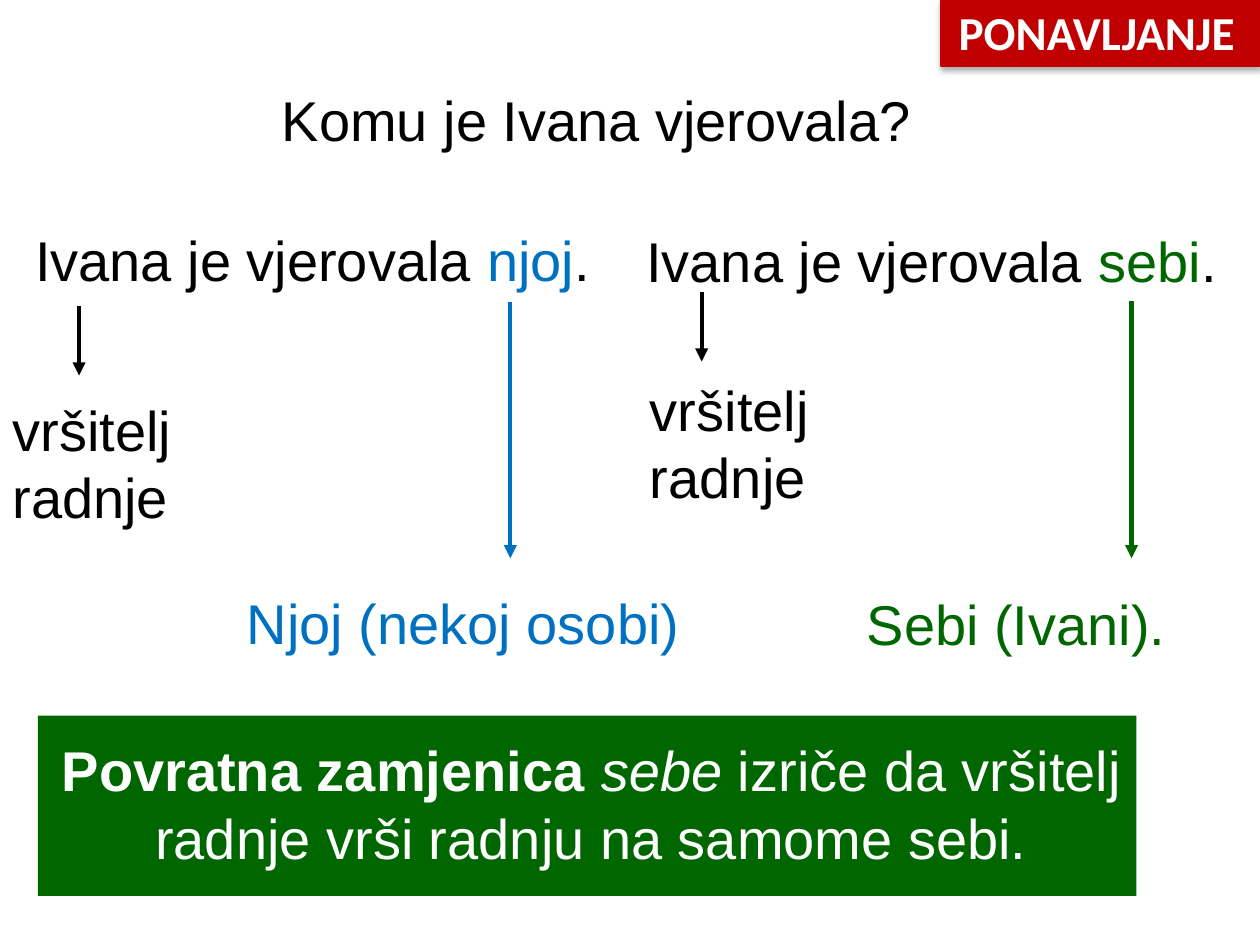
from dataclasses import dataclass

from lxml import etree
from pptx import Presentation
from pptx import util as u
from pptx.dml import color
from pptx.enum import shapes, text
from pptx.oxml import ns

Pt = u.Pt


@dataclass(frozen=True)
class Theme:
    black: str = "000000"
    white: str = "FFFFFF"
    blue: str = "0070C0"
    green: str = "006600"
    red: str = "C00000"
    body_font: str = "Arial"
    title_font: str = "Calibri"
    body_size: float = 32
    title_size: float = 27


theme = Theme()


def rgb(value):
    return color.RGBColor.from_string(value)


def add_span(para, words, tint, bold=False, italic=False, font=theme.body_font, size=theme.body_size):
    span = para.add_run()
    span.text = words
    span.font.name = font
    span.font.size = Pt(size)
    span.font.bold = bold
    span.font.italic = italic
    span.font.color.rgb = rgb(tint)


deck = Presentation()
deck.slide_width = Pt(720)
deck.slide_height = Pt(540)
page = deck.slides.add_slide(deck.slide_layouts[5])

labels = [
    (154, 45.4, 376.6, 46, False, [("Komu je Ivana vjerovala?", theme.black)]),
    (13, 125.3, 334, 46, False,
     [("Ivana je vjerovala ", theme.black), ("njoj", theme.blue), (".", theme.black)]),
    (362.2, 126, 351.4, 46, False,
     [("Ivana je vjerovala ", theme.black), ("sebi", theme.green), (".", theme.black)]),
    (0, 222.5, 118, 85, True, [("vršitelj radnje", theme.black)]),
    (364.3, 211, 118, 85, True, [("vršitelj radnje", theme.black)]),
    (134, 332.6, 280.8, 46, True, [("Njoj (nekoj osobi)", theme.blue)]),
    (488.2, 333.4, 212.4, 46, True, [("Sebi (Ivani).", theme.green)]),
]
for left, top, width, height, wrap, spans in labels:
    box = page.shapes.add_textbox(Pt(left), Pt(top), Pt(width), Pt(height))
    box.text_frame.word_wrap = wrap
    box.text_frame.auto_size = text.MSO_AUTO_SIZE.SHAPE_TO_FIT_TEXT
    for words, tint in spans:
        add_span(box.text_frame.paragraphs[0], words, tint)

arrows = [
    (45.2, 175, 214.6, theme.black),
    (291.6, 172.8, 319, theme.blue),
    (401, 167, 206.6, theme.black),
    (646.6, 172, 319, theme.green),
]
for x, start, end, tint in arrows:
    arrow = page.shapes.add_connector(shapes.MSO_CONNECTOR.STRAIGHT, Pt(x), Pt(start), Pt(x), Pt(end))
    arrow.line.color.rgb = rgb(tint)
    arrow.line.width = Pt(2.5)
    etree.SubElement(arrow.line._get_or_add_ln(), ns.qn("a:tailEnd"), type="triangle")
    etree.SubElement(arrow._element.spPr, ns.qn("a:effectLst"))

panels = [
    (537.8, 0, 182.2, 37.6, theme.red),
    (21.6, 409, 627.8, 103, theme.green),
]
for left, top, width, height, tint in panels:
    panel = page.shapes.add_shape(shapes.MSO_SHAPE.RECTANGLE, Pt(left), Pt(top), Pt(width), Pt(height))
    panel.shadow.inherit = False
    panel.fill.solid()
    panel.fill.fore_color.rgb = rgb(tint)
    if tint == theme.red:
        panel.line.color.rgb = rgb(tint)
        panel.line.width = Pt(1)
        effects = panel._element.spPr.find(ns.qn("a:effectLst"))
        shadow = etree.SubElement(effects, ns.qn("a:outerShdw"), blurRad=str(Pt(3.5)),
                                  dist=str(Pt(2.2)), dir="5400000", rotWithShape="0")
        shade = etree.SubElement(shadow, ns.qn("a:srgbClr"), val=theme.black)
        etree.SubElement(shade, ns.qn("a:alpha"), val="32000")
    else:
        panel.line.fill.background()

title = page.shapes.title
title.left, title.top, title.width, title.height = Pt(537.8), Pt(-12.2), Pt(172.8), Pt(49.7)
title._element.getparent().append(title._element)
rule = page.shapes.add_textbox(Pt(26.6), Pt(417.6), Pt(622.8), Pt(77.8))
for box in (title, rule):
    frame = box.text_frame
    frame.word_wrap = True
    frame.auto_size = text.MSO_AUTO_SIZE.NONE
    frame.margin_left = frame.margin_right = Pt(5)
    frame.margin_top = frame.margin_bottom = Pt(2.9)

title.text_frame.vertical_anchor = text.MSO_ANCHOR.BOTTOM
para = title.text_frame.paragraphs[0]
para.alignment = text.PP_ALIGN.RIGHT
para.line_spacing = 0.9
add_span(para, "PONAVLJANJE", theme.white, bold=True, font=theme.title_font, size=theme.title_size)

para = rule.text_frame.paragraphs[0]
para.alignment = text.PP_ALIGN.CENTER
para.space_before = Pt(10)
add_span(para, "Povratna zamjenica ", theme.white, bold=True)
add_span(para, "sebe", theme.white, italic=True)
add_span(para, " izriče da vršitelj radnje vrši radnju na samome sebi.", theme.white)

deck.save("out.pptx")
